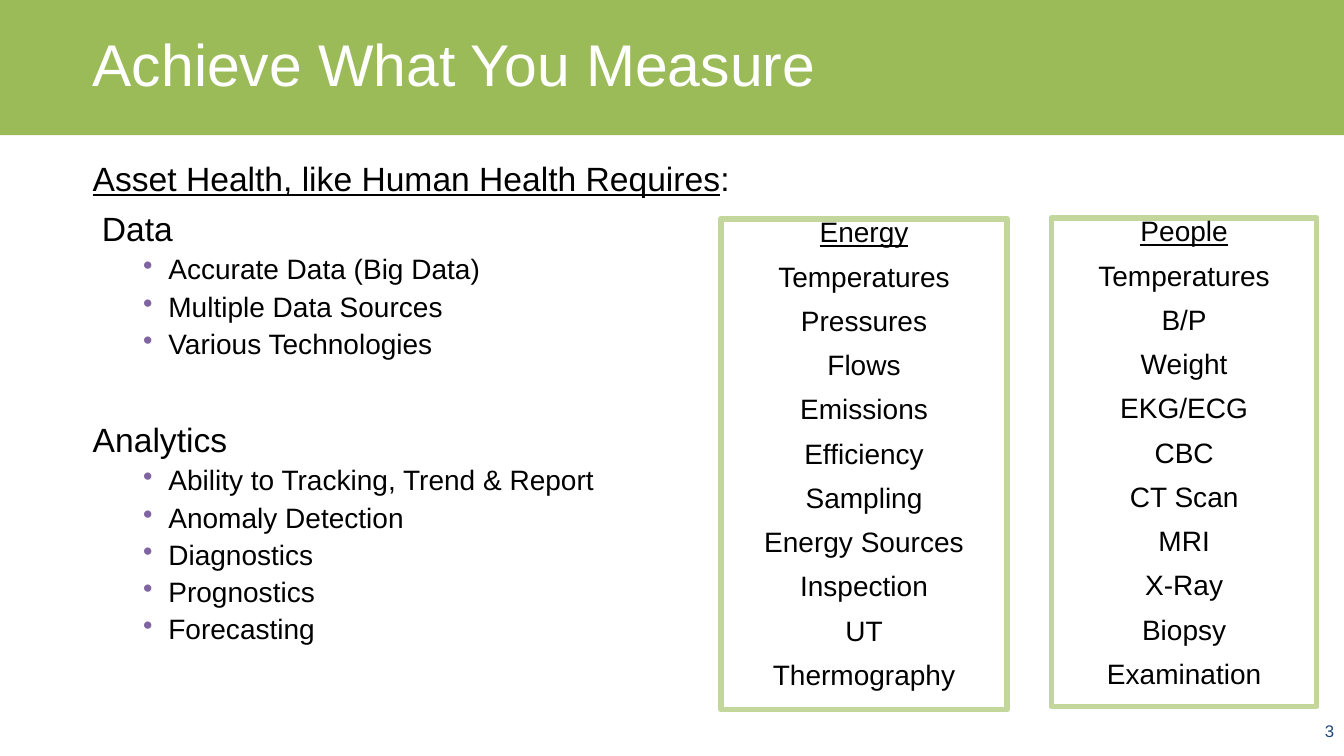
"""Build the slide on asset health and human health measures."""
from lxml.etree import SubElement
from pptx import Presentation
from pptx.dml.color import RGBColor
from pptx.enum.shapes import MSO_SHAPE
from pptx.enum.text import MSO_ANCHOR, PP_ALIGN
from pptx.oxml.ns import qn
from pptx.util import Inches, Pt

COLORS = {"green": "9BBB59", "pale": "C3D69B", "purple": "8064A2",
          "black": "000000", "white": "FFFFFF", "navy": "1F497D"}
SIDES = ("margin_left", "margin_top", "margin_right", "margin_bottom")


def color(name):
    return RGBColor.from_string(COLORS[name])


def assign(target, values):
    for name, value in values.items():
        setattr(target, name, value)


class Deck:
    def __init__(self, slide, font="Arial"):
        self.slide = slide
        self.font = font

    def panel(self, box, fill=None, line=None):
        shape = self.slide.shapes.add_shape(MSO_SHAPE.RECTANGLE, *map(Inches, box))
        shape.shadow.inherit = False
        if fill:
            shape.fill.solid()
            shape.fill.fore_color.rgb = color(fill)
        else:
            shape.fill.background()
        if line:
            shape.line.color.rgb = color(line)
            shape.line.width = Pt(4)
        else:
            shape.line.fill.background()
        return self.frame(shape)

    def label(self, box, **values):
        return self.frame(self.slide.shapes.add_textbox(*map(Inches, box)), **values)

    def frame(self, shape, **values):
        frame = shape.text_frame
        base = {"word_wrap": True, "vertical_anchor": MSO_ANCHOR.TOP}
        assign(frame, base | dict.fromkeys(SIDES, 0) | values)
        return frame

    def para(self, frame, text, size, ink="black", tail="", under=False,
             bullet=False, indent=0, **values):
        first = not frame.paragraphs[0].runs
        para = frame.paragraphs[0] if first else frame.add_paragraph()
        props = para._p.get_or_add_pPr()
        props.set("marL", str(Inches(indent)))
        if bullet:
            props.set("indent", str(Inches(-0.25)))
            tint = SubElement(props, qn("a:buClr"))
            SubElement(tint, qn("a:srgbClr"), val=COLORS["purple"])
            SubElement(props, qn("a:buChar"), char="•")
        base = {"line_spacing": 0.9, "space_before": Pt(10)}
        assign(para, base | values)
        if first:
            para.space_before = Pt(0)
        for words, line in ((text, under), (tail, False)):
            if words:
                run = para.add_run()
                run.text = words
                assign(run.font, {"name": self.font, "size": Pt(size),
                                  "underline": line})
                run.font.color.rgb = color(ink)

    def points(self, frame, items):
        for item in items:
            self.para(frame, item, 20, bullet=True, indent=0.75,
                      space_before=Pt(5))

    def column(self, box, items):
        frame = self.panel(box, line="pale")
        for spot, item in enumerate(items):
            self.para(frame, item, 20, under=spot == 0,
                      alignment=PP_ALIGN.CENTER)


def main():
    show = Presentation()
    assign(show, {"slide_width": Inches(13.33), "slide_height": Inches(7.5)})
    deck = Deck(show.slides.add_slide(show.slide_layouts[6]))

    deck.panel((0, 0, 13.33, 1.34), fill="green")
    title = deck.label((0.92, 0, 12.41, 1.34), vertical_anchor=MSO_ANCHOR.MIDDLE)
    deck.para(title, "Achieve What You Measure", 42, "white")

    body = deck.label((0.92, 1.61, 6.33, 4.76))
    deck.para(body, "Asset Health, like Human Health Requires", 24,
              tail=":", under=True)
    deck.para(body, "Data", 24, indent=0.09)
    deck.points(body, ["Accurate Data (Big Data)", "Multiple Data Sources",
                       "Various Technologies"])
    deck.para(body, "Analytics", 24, space_before=Pt(45))
    deck.points(body, ["Ability to Tracking, Trend & Report", "Anomaly Detection",
                       "Diagnostics", "Prognostics", "Forecasting"])

    deck.column((7.15, 2.17, 2.84, 4.87), [
        "Energy", "Temperatures", "Pressures", "Flows", "Emissions", "Efficiency",
        "Sampling", "Energy Sources", "Inspection", "UT", "Thermography"])
    deck.column((10.43, 2.16, 2.63, 4.85), [
        "People", "Temperatures", "B/P", "Weight", "EKG/ECG", "CBC",
        "CT Scan", "MRI", "X-Ray", "Biopsy", "Examination"])

    page = deck.label((10.22, 7.1, 3.11, 0.4), margin_right=Inches(0.1),
                      margin_top=Inches(0.05))
    deck.para(page, "3", 12, "navy", alignment=PP_ALIGN.RIGHT, line_spacing=1.0)
    show.save("out.pptx")


if __name__ == "__main__":
    main()
